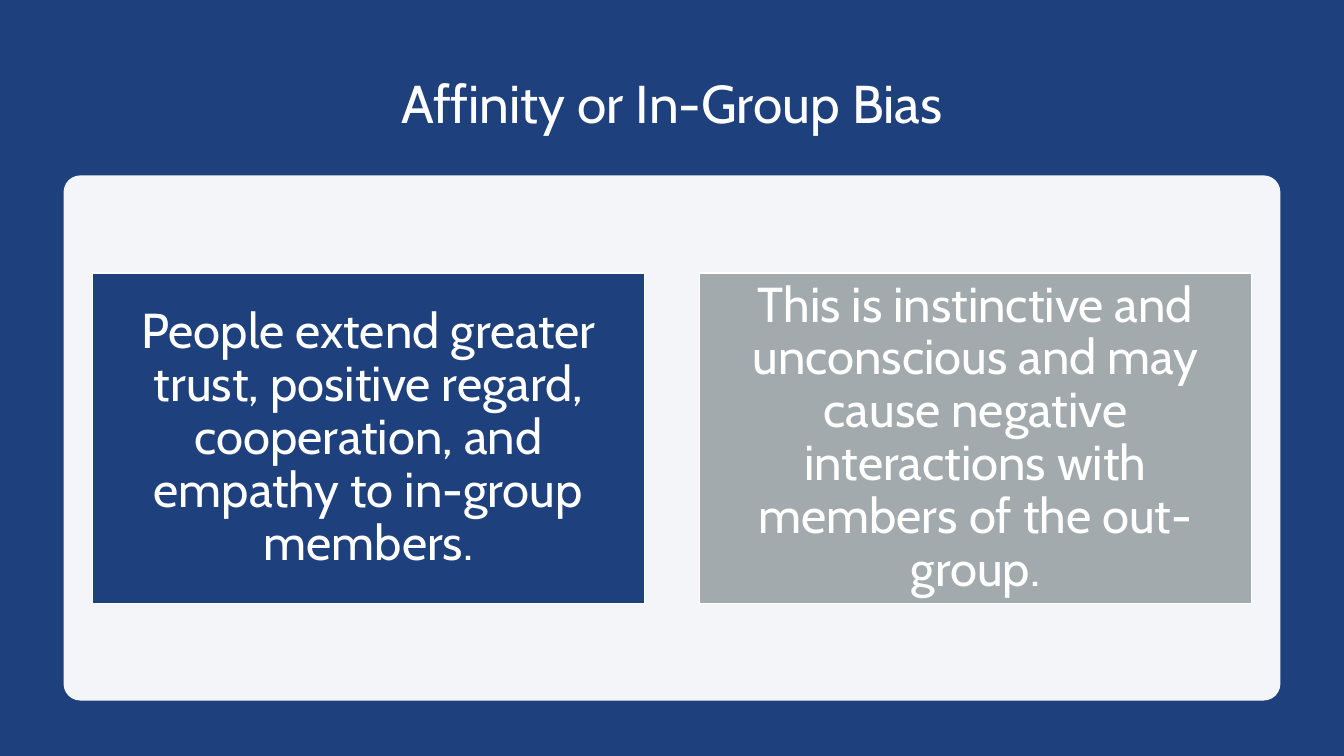
from pptx import Presentation
from pptx.dml.color import RGBColor
from pptx.enum.shapes import MSO_SHAPE as Shape
from pptx.enum.text import MSO_ANCHOR as Anchor, MSO_AUTO_SIZE as AutoSize, PP_ALIGN as Align
from pptx.oxml.ns import qn
from pptx.util import Inches, Pt
from lxml import etree

NAVY, GREY, WHITE = "1E407C", "A3AAAD", "FFFFFF"
CARDS = [
    ("People extend greater trust, positive regard, cooperation, "
     "and empathy to in-group members.", NAVY),
    ("This is instinctive and unconscious and may cause negative "
     "interactions with members of the out-group.", GREY),
]
# Percent of the slide's width and height
MARGIN, CARD_WIDTH, CARD_PITCH = 6.9, 41.04, 45.16
CARD_TOP, CARD_HEIGHT = 36.13, 43.73


def color(code):
    return RGBColor.from_string(code)


class SlideBuilder:
    font = "Cabin"

    def __init__(self, deck):
        self.deck = deck
        self.slide = deck.slides.add_slide(deck.slide_layouts[5])

    def place(self, left, top, width, height):
        """Turn percentages of the slide into lengths."""
        across, down = self.deck.slide_width / 100, self.deck.slide_height / 100
        return [round(value * unit) for value, unit in
                zip((left, top, width, height), (across, down, across, down))]

    def set_text(self, box, text, size):
        frame = box.text_frame
        frame.text = text
        frame.word_wrap = True
        frame.auto_size = AutoSize.NONE
        frame.vertical_anchor = Anchor.MIDDLE
        para = frame.paragraphs[0]
        para.alignment = Align.CENTER
        para.line_spacing = 0.9
        font = para.runs[0].font
        font.name, font.size = self.font, Pt(size)
        font.color.rgb = color(WHITE)

    def block(self, area, fill, kind=Shape.RECTANGLE, outline=None):
        box = self.slide.shapes.add_shape(kind, *self.place(*area))
        box.shadow.inherit = False
        box.fill.solid()
        box.fill.fore_color.rgb = color(fill)
        if outline:
            box.line.color.rgb = color(outline)
            box.line.width = Pt(1)
        else:
            box.line.fill.background()
        return box

    def backdrop(self, fill):
        box = self.block((0, 0, 100, 100), fill)
        self.slide.shapes.title.element.addprevious(box.element)

    def title(self, area, text):
        title = self.slide.shapes.title
        title.left, title.top, title.width, title.height = self.place(*area)
        self.set_text(title, text, 38)

    def panel(self, area, fill, opacity):
        box = self.block(area, fill, Shape.ROUNDED_RECTANGLE)
        box.adjustments[0] = 0.032
        tint = box.element.spPr.find(qn("a:solidFill"))[0]
        etree.SubElement(tint, qn("a:alpha"), val=str(opacity * 1000))

    def card(self, area, text, fill):
        box = self.block(area, fill, outline=WHITE)
        frame = box.text_frame
        frame.margin_left = frame.margin_right = Inches(0.15)
        frame.margin_top = frame.margin_bottom = Inches(0.15)
        self.set_text(box, text, 35)


def main():
    deck = Presentation()
    deck.slide_width, deck.slide_height = Inches(13.33), Inches(7.5)
    page = SlideBuilder(deck)

    # Background and title
    page.backdrop(NAVY)
    page.title((MARGIN, 6.67, 100 - 2 * MARGIN, 14.67), "Affinity or In-Group Bias")

    # Panel with the two cards
    page.panel((4.73, 23.2, 90.54, 69.47), WHITE, 95)
    for column, (text, fill) in enumerate(CARDS):
        left = MARGIN + column * CARD_PITCH
        page.card((left, CARD_TOP, CARD_WIDTH, CARD_HEIGHT), text, fill)

    deck.save("out.pptx")


if __name__ == "__main__":
    main()
